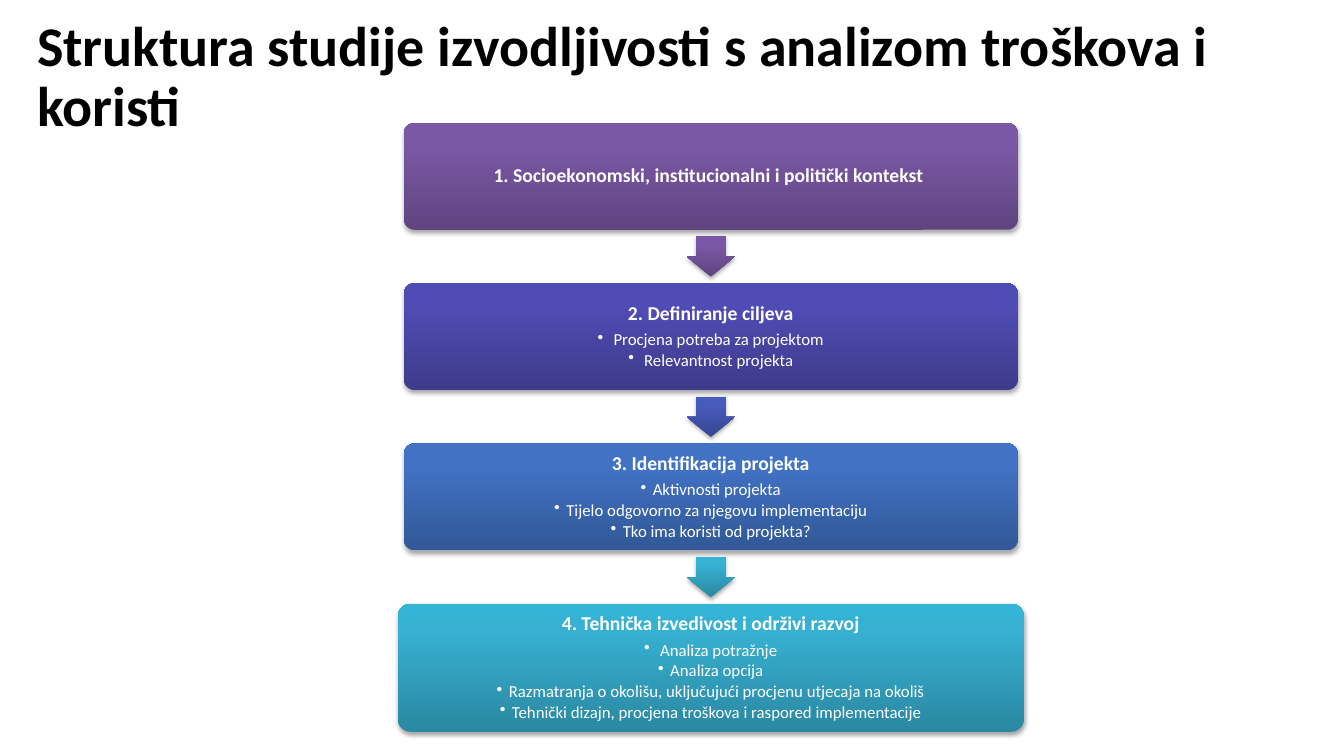
from pptx import Presentation
from pptx.dml.color import RGBColor
from pptx.enum.shapes import MSO_SHAPE as SHAPE
from pptx.enum.text import MSO_ANCHOR as ANCHOR, PP_ALIGN as ALIGN
from pptx.oxml import parse_xml
from pptx.oxml.ns import nsdecls
from pptx.util import Inches, Pt

FONT = "Calibri"
COLORS = {"title": "000000", "text": "FFFFFF", "shadow": "000000"}
# Gradient stops from bottom to top
GRADIENTS = {
    "purple": ("5F4480", "7B58A6", "7C57A8"),
    "indigo": ("3E3B8B", "504CB5", "4F4BB8"),
    "royal": ("374691", "475BBC", "455ABF"),
    "blue": ("325897", "4172C4", "3F72C7"),
    "teal": ("2A88A2", "37B1D2", "34B4D6"),
}
STOPS = (0, 80, 100)

CENTER = 7.05
FLOW_TOP = 1.22
STEP_GAP = 0.53
ARROW_WIDTH, ARROW_HEIGHT = 0.48, 0.4

TITLE = "Struktura studije izvodljivosti s analizom troškova i koristi"
# heading, bullets, box gradient, gradient of the arrow below, width, height
STEPS = [
    ("1. Socioekonomski, institucionalni i politički kontekst ", [],
     "purple", "purple", 6.09, 1.06),
    ("2. Definiranje ciljeva",
     [" Procjena potreba za projektom", " Relevantnost projekta"],
     "indigo", "royal", 6.09, 1.06),
    ("3. Identifikacija projekta",
     ["Aktivnosti projekta", "Tijelo odgovorno za njegovu implementaciju",
      "Tko ima koristi od projekta?"],
     "blue", "teal", 6.09, 1.06),
    ("4. Tehnička izvedivost i održivi razvoj",
     [" Analiza potražnje", "Analiza opcija",
      "Razmatranja o okolišu, uključujući procjenu utjecaja na okoliš",
      "Tehnički dizajn, procjena troškova i raspored implementacije"],
     "teal", None, 6.21, 1.27),
]


def add_run(paragraph, text, size, color, bold=False):
    run = paragraph.add_run()
    run.text = text
    run.font.name = FONT
    run.font.size = Pt(size)
    run.font.bold = bold
    run.font.color.rgb = RGBColor.from_string(COLORS[color])


def add_title(slide):
    box = slide.shapes.add_textbox(Inches(0.27), Inches(0.05),
                                   Inches(12.87), Inches(1.45))
    frame = box.text_frame
    frame.word_wrap = True
    frame.vertical_anchor = ANCHOR.MIDDLE
    paragraph = frame.paragraphs[0]
    paragraph.line_spacing = 0.9
    add_run(paragraph, TITLE, 40, "title", bold=True)


def add_shaded_shape(slide, preset, top, width, height, gradient):
    """Add a centred shape with a vertical gradient and a soft shadow."""
    shape = slide.shapes.add_shape(
        preset, Inches(CENTER - width / 2), Inches(top),
        Inches(width), Inches(height))
    stops = "".join(
        f'<a:gs pos="{stop * 1000}"><a:srgbClr val="{color}"/></a:gs>'
        for stop, color in zip(STOPS, GRADIENTS[gradient]))
    properties = shape._element.spPr
    properties.append(parse_xml(
        f'<a:gradFill {nsdecls("a")} rotWithShape="0"><a:gsLst>{stops}</a:gsLst>'
        '<a:lin ang="16200000" scaled="0"/></a:gradFill>'))
    shape.line.fill.background()
    properties.append(parse_xml(
        f'<a:effectLst {nsdecls("a")}><a:outerShdw blurRad="{Pt(3.1)}" '
        f'dist="{Pt(1.8)}" dir="5400000" rotWithShape="0">'
        f'<a:srgbClr val="{COLORS["shadow"]}"><a:alpha val="35000"/></a:srgbClr>'
        '</a:outerShdw></a:effectLst>'))
    return shape


def add_bullet(paragraph):
    properties = paragraph._p.get_or_add_pPr()
    properties.set("marL", str(Inches(0.12)))
    properties.set("indent", str(-Inches(0.12)))
    properties.append(parse_xml(f'<a:buChar {nsdecls("a")} char="•"/>'))


def add_step(slide, top, heading, bullets, gradient, width, height):
    step = add_shaded_shape(slide, SHAPE.ROUNDED_RECTANGLE, top, width, height,
                            gradient)
    step.adjustments[0] = 0.1
    frame = step.text_frame
    frame.word_wrap = True
    frame.vertical_anchor = ANCHOR.MIDDLE
    frame.margin_left = frame.margin_right = Inches(0.09)
    frame.margin_top = frame.margin_bottom = Inches(0.09)
    paragraph = frame.paragraphs[0]
    paragraph.alignment = ALIGN.CENTER
    paragraph.line_spacing = 0.9
    paragraph.space_after = Pt(4.9)
    add_run(paragraph, heading, 14, "text", bold=True)
    for bullet in bullets:
        paragraph = frame.add_paragraph()
        add_bullet(paragraph)
        paragraph.level = 1
        paragraph.alignment = ALIGN.CENTER
        paragraph.line_spacing = 0.9
        paragraph.space_after = Pt(1.8)
        add_run(paragraph, bullet, 12, "text")


def add_arrow(slide, top, gradient):
    arrow = add_shaded_shape(slide, SHAPE.DOWN_ARROW, top, ARROW_WIDTH,
                             ARROW_HEIGHT, gradient)
    arrow.adjustments[0] = 0.6
    arrow.adjustments[1] = 0.5


def main():
    prs = Presentation()
    prs.slide_width, prs.slide_height = Inches(13.33), Inches(7.5)
    slide = prs.slides.add_slide(prs.slide_layouts[6])
    add_title(slide)
    top = FLOW_TOP
    for heading, bullets, box_gradient, arrow_gradient, width, height in STEPS:
        add_step(slide, top, heading, bullets, box_gradient, width, height)
        if arrow_gradient:
            arrow_top = top + height + (STEP_GAP - ARROW_HEIGHT) / 2
            add_arrow(slide, arrow_top, arrow_gradient)
        top += height + STEP_GAP
    prs.save("out.pptx")


if __name__ == "__main__":
    main()
